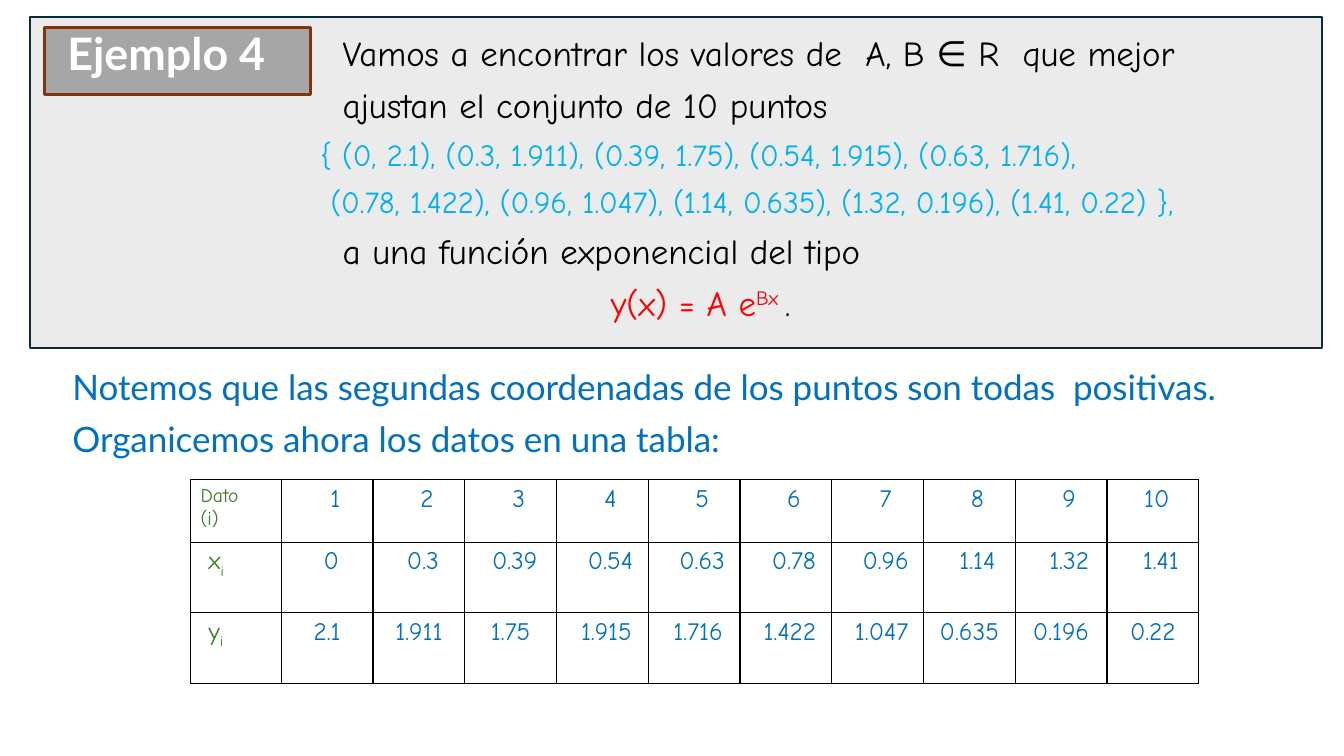
"""Build the slide that states an exponential fitting example and tabulates its ten points."""
import dataclasses
import typing

import lxml.etree
import pptx
import pptx.dml.color
import pptx.enum.shapes
import pptx.enum.text
import pptx.oxml.ns
import pptx.util

Inches = pptx.util.Inches
Pt = pptx.util.Pt
Align = pptx.enum.text.PP_ALIGN


@dataclasses.dataclass(frozen=True)
class Theme:
    hand: str = "Comic Neue"
    sans: str = "Lato"
    black: str = "000000"
    white: str = "FFFFFF"
    blue: str = "0070C0"
    sky: str = "00B0F0"
    red: str = "FF0000"
    green: str = "3B7D23"
    panel: str = "D9D9D9"
    panel_line: str = "092A39"
    badge: str = "A6A6A6"
    badge_line: str = "80350E"
    title: float = 32
    body: float = 25
    points: float = 22
    cell: float = 18
    small: float = 14


THEME = Theme()


@dataclasses.dataclass(frozen=True)
class Span:
    text: str
    color: str = THEME.black
    size: float = THEME.body
    baseline: int = 0


@dataclasses.dataclass(frozen=True)
class Line:
    spans: tuple[Span, ...]
    indent: float = 0


@dataclasses.dataclass(frozen=True)
class TableRow:
    height: float
    header: tuple[Line, ...]
    header_nudge: int
    values: tuple[str, ...]
    nudges: tuple[int, ...]


STATEMENT = (
    Line((Span("Vamos a encontrar los valores de  A, B ∈ R  que mejor"),), 0.22),
    Line((Span("ajustan el conjunto de 10 puntos"),), 0.22),
    Line((Span("{ (0, 2.1), (0.3, 1.911), (0.39, 1.75), (0.54, 1.915), (0.63, 1.716),",
               THEME.sky, THEME.points),)),
    Line((Span("(0.78, 1.422), (0.96, 1.047), (1.14, 0.635), (1.32, 0.196), (1.41, 0.22) },",
               THEME.sky, THEME.points),), 0.1),
    Line((Span("a una función exponencial del tipo"),), 0.22),
    Line((Span("y(x) = A e", THEME.red), Span("Bx ", THEME.red, baseline=30), Span(".")), 2.88),
)

NOTES = (
    (3.62, "Notemos que las segundas coordenadas de los puntos son todas  positivas."),
    (4.14, "Organicemos ahora los datos en una tabla:"),
)


def variable(letter: str) -> tuple[Line, ...]:
    """Return the header of a row for an indexed variable."""
    return (Line((Span(letter, THEME.green, THEME.cell),
                  Span("i", THEME.green, THEME.cell, -25))),)


ROWS = (
    TableRow(0.62, tuple(Line((Span(word, THEME.green, THEME.small),)) for word in ("Dato", "(i)")),
             0, tuple(str(number) for number in range(1, 11)), (2,) * 9 + (1,)),
    TableRow(0.7, variable("x"), 1,
             ("0", "0.3", "0.39", "0.54", "0.63", "0.78", "0.96", "1.14", "1.32", "1.41"),
             (1,) * 3 + (2,) * 7),
    TableRow(0.7, variable("y"), 1,
             ("2.1", "1.911", "1.75", "1.915", "1.716", "1.422", "1.047", "0.635", "0.196", "0.22"),
             (0,) * 3 + (1,) * 4 + (0,) * 3),
)
FIRST_COLUMN, COLUMN, NUDGE = 0.9, 0.91, 0.08


def rgb(color: str) -> pptx.dml.color.RGBColor:
    """Turn a hexadecimal string into a colour."""
    return pptx.dml.color.RGBColor.from_string(color)


def write(frame: typing.Any, lines: typing.Sequence[Line], *, font: str, bold: bool = False,
          align: Align = Align.LEFT, spacing: float = 1.0, before: float = 0) -> None:
    """Write formatted lines into a text frame, one paragraph each."""
    frame.word_wrap = True
    for index, line in enumerate(lines):
        para = frame.add_paragraph() if index else frame.paragraphs[0]
        para.alignment = align
        para.line_spacing = spacing
        para.space_before = Pt(before if index else 0)
        if line.indent:
            para._p.get_or_add_pPr().set("marL", str(Inches(line.indent)))
        for part in line.spans:
            span = para.add_run()
            span.text = part.text
            span.font.name = font
            span.font.size = Pt(part.size)
            span.font.bold = bold
            span.font.color.rgb = rgb(part.color)
            if part.baseline:
                span.font._element.set("baseline", str(part.baseline * 1000))


def paint(shape: typing.Any, fill: str, line: str, width: float) -> None:
    """Give a shape its fill and outline."""
    shape.fill.solid()
    shape.fill.fore_color.rgb = rgb(fill)
    shape.line.color.rgb = rgb(line)
    shape.line.width = Pt(width)


def add_child(parent: typing.Any, tag: str, **attributes: str) -> typing.Any:
    """Append a drawing element with attributes."""
    return lxml.etree.SubElement(parent, pptx.oxml.ns.qn(tag), attributes)


def draw_heading(page: typing.Any) -> None:
    """Draw the translucent panel and the title badge over it."""
    panel = page.shapes.add_shape(pptx.enum.shapes.MSO_SHAPE.RECTANGLE,
                                  Inches(0.3), Inches(0.17), Inches(12.81), Inches(3.28))
    panel.shadow.inherit = False
    paint(panel, THEME.panel, THEME.panel_line, 1.5)
    add_child(next(panel.element.iter(pptx.oxml.ns.qn("a:srgbClr"))), "a:alpha", val="50000")

    title = page.shapes.title
    title.left, title.top, title.width, title.height = map(Inches, (0.44, 0.27, 2.64, 0.67))
    paint(title, THEME.badge, THEME.badge_line, 2)
    frame = title.text_frame
    frame.auto_size = pptx.enum.text.MSO_AUTO_SIZE.NONE
    frame.vertical_anchor = pptx.enum.text.MSO_ANCHOR.TOP
    frame.margin_right = Inches(0.32)
    write(frame, (Line((Span("Ejemplo 4", THEME.white, THEME.title),)),),
          font=THEME.sans, bold=True, align=Align.CENTER, spacing=0.9)
    panel.element.addnext(title.element)


def draw_table(page: typing.Any) -> None:
    """Draw the table of the ten points."""
    count = len(ROWS[0].values)
    frame = page.shapes.add_table(len(ROWS), count + 1, Inches(1.89), Inches(4.76),
                                  Inches(FIRST_COLUMN + COLUMN * count),
                                  Inches(sum(row.height for row in ROWS)))
    table = frame.table
    table.first_row = table.horz_banding = False
    for index, column in enumerate(table.columns):
        column.width = Inches(COLUMN if index else FIRST_COLUMN)
    for index, row in enumerate(ROWS):
        table.rows[index].height = Inches(row.height)
        bodies = [(Line((Span(value, THEME.blue, THEME.cell),)),) for value in row.values]
        contents = zip((row.header, *bodies), (row.header_nudge, *row.nudges))
        for position, (lines, nudge) in enumerate(contents):
            cell = table.cell(index, position)
            cell.margin_left = Inches(0.1 + NUDGE * nudge)
            write(cell.text_frame, lines, font=THEME.hand,
                  align=Align.CENTER if position else Align.LEFT)
            properties = cell._tc.get_or_add_tcPr()
            for side in ("a:lnL", "a:lnR", "a:lnT", "a:lnB"):
                border = add_child(properties, side, w=str(Pt(1)))
                add_child(add_child(border, "a:solidFill"), "a:srgbClr", val=THEME.black)
            cell.fill.background()


def main() -> None:
    """Build and save the deck."""
    deck = pptx.Presentation()
    deck.slide_width, deck.slide_height = Inches(13.33), Inches(7.5)
    page = deck.slides.add_slide(deck.slide_layouts.get_by_name("Title Only"))
    draw_heading(page)
    box = page.shapes.add_textbox(Inches(3.08), Inches(0.31), Inches(10), Inches(3.1))
    write(box.text_frame, STATEMENT, font=THEME.hand, spacing=0.9, before=10)
    for top, text in NOTES:
        box = page.shapes.add_textbox(Inches(0.62), Inches(top), Inches(12.5), Inches(0.5))
        write(box.text_frame, (Line((Span(text, THEME.blue),)),), font=THEME.sans, spacing=0.9)
    draw_table(page)
    deck.save("out.pptx")


if __name__ == "__main__":
    main()
